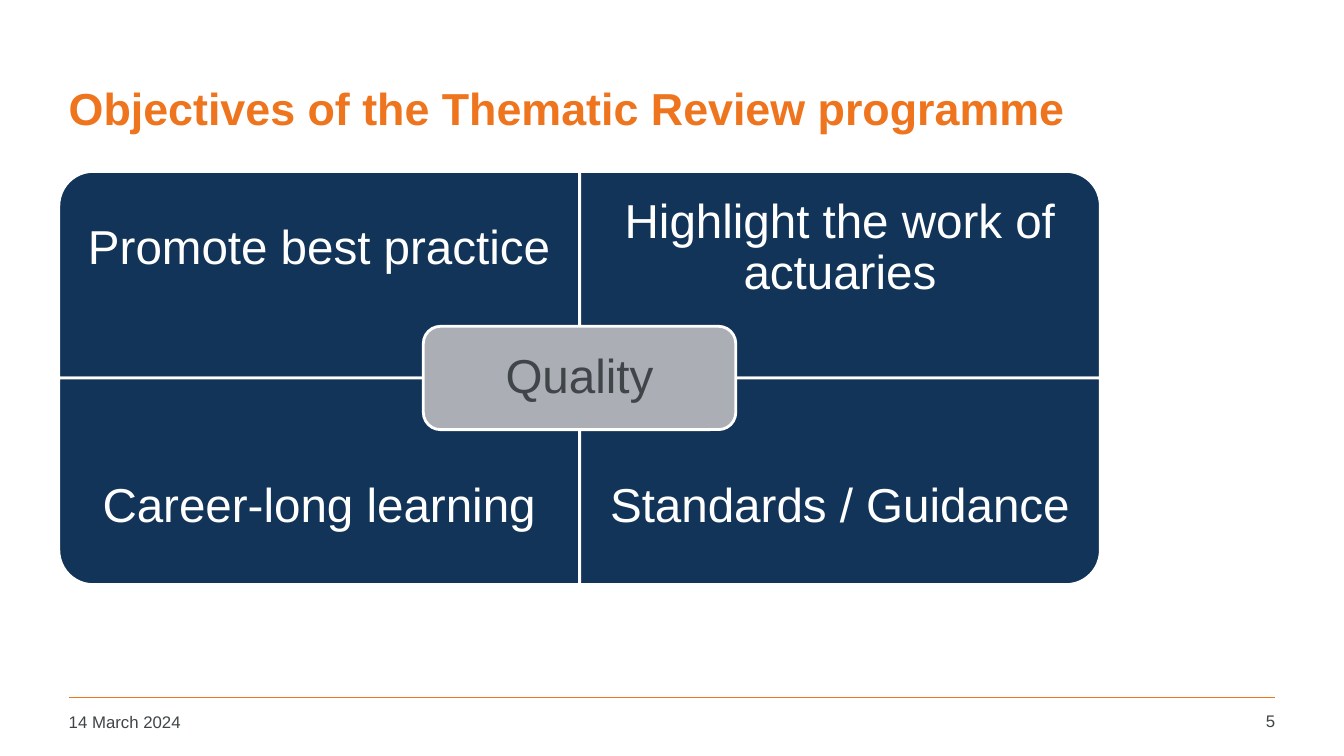
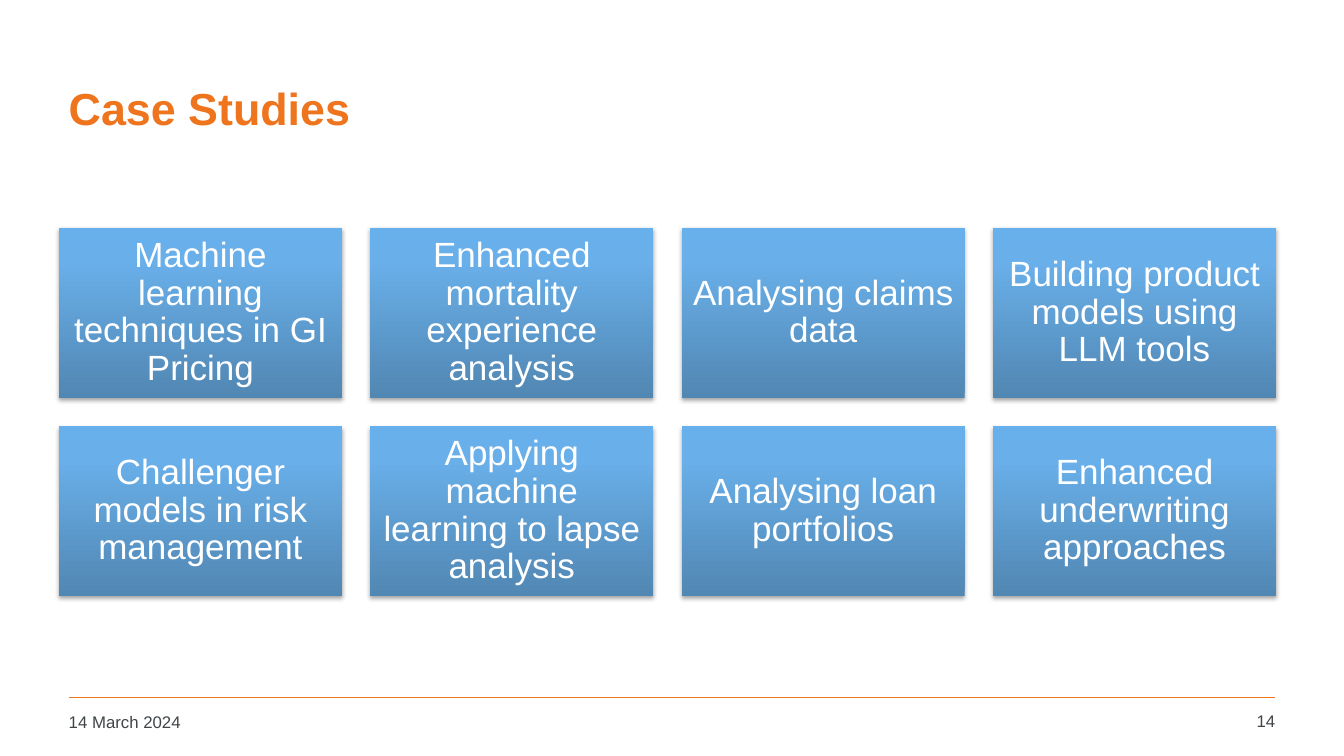
"""Build two slides on the Thematic Review programme."""
from copy import deepcopy
from dataclasses import dataclass

from pptx import Presentation as Deck
from pptx.dml.color import RGBColor as Rgb
from pptx.enum.shapes import MSO_CONNECTOR as Wire, MSO_SHAPE as Form
from pptx.enum.text import MSO_ANCHOR as Anchor, PP_ALIGN as Align
from pptx.oxml import parse_xml as to_xml
from pptx.oxml.ns import nsdecls, qn
from pptx.util import Pt


@dataclass(frozen=True)
class Theme:
    font: str = "Arial"
    orange: str = "EE741D"
    navy: str = "113458"
    grey: str = "ABAEB5"
    ink: str = "3F4548"
    white: str = "FFFFFF"
    fade: tuple = ((0, "5187B3"), (0.8, "69AFE9"), (1, "68B0EC"))
    head: int = 32
    large: int = 34
    tile: int = 25
    foot: int = 12


class Board:
    def __init__(self, deck, theme):
        self.deck, self.theme, self.slide = deck, theme, None

    def start(self, title, number):
        look = self.theme
        self.slide = self.deck.slides.add_slide(self.deck.slide_layouts[6])
        self.rule(49, 911, 498.2)
        self.text((42, 31.7, 870.5, 90), title, look.head, look.orange,
                  align=Align.LEFT, bold=True)
        for box, words, align in (((42, 504.7, 212, 26), "14 March 2024", Align.LEFT),
                                  ((850.3, 504, 67.7, 26.6), number, Align.RIGHT)):
            self.text(box, words, look.foot, look.ink, align=align, anchor=Anchor.TOP)

    def rule(self, left, right, y):
        line = self.slide.shapes.add_connector(
            Wire.STRAIGHT, Pt(left), Pt(y), Pt(right), Pt(y))
        line.line.color.rgb = Rgb.from_string(self.theme.orange)
        line.line.width = Pt(1)
        line._element.spPr.append(to_xml(f"<a:effectLst {nsdecls('a')}/>"))

    def text(self, box, words, size, color, pad=(7.2, 3.6), **style):
        shape = self.slide.shapes.add_textbox(*map(Pt, box))
        self.label(shape, words, size, color, pad, **style)

    def label(self, shape, words, size, color, pad, align=Align.CENTER,
              anchor=Anchor.MIDDLE, bold=False, space=1.0):
        frame = shape.text_frame
        frame.text = words
        frame.word_wrap = True
        frame.vertical_anchor = anchor
        frame.margin_left = frame.margin_right = Pt(pad[0])
        frame.margin_top = frame.margin_bottom = Pt(pad[1])
        para = frame.paragraphs[0]
        para.alignment, para.line_spacing = align, space
        font = para.runs[0].font
        font.name, font.size, font.bold = self.theme.font, Pt(size), bold
        font.color.rgb = Rgb.from_string(color)

    def panel(self, form, box, fill, turn=0):
        x, y, wide, high = box
        if turn % 180:
            x, y = x + (wide - high) / 2, y + (high - wide) / 2
            wide, high = high, wide
        shape = self.slide.shapes.add_shape(form, Pt(x), Pt(y), Pt(wide), Pt(high))
        shape.rotation = turn
        shape.shadow.inherit = False
        shape.fill.solid()
        shape.fill.fore_color.rgb = Rgb.from_string(fill)
        shape.line.color.rgb = Rgb.from_string(self.theme.white)
        shape.line.width = Pt(2)
        return shape

    def tile(self, box, words):
        look = self.theme
        shape = self.panel(Form.RECTANGLE, box, look.navy)
        shape.line.fill.background()
        shape.fill.gradient()
        shape.fill.gradient_angle = 90
        props = shape._element.spPr
        first = props.find(".//" + qn("a:gs"))
        first.addnext(deepcopy(first))
        for stop, (place, color) in zip(shape.fill.gradient_stops, look.fade):
            stop.position = place
            stop.color.rgb = Rgb.from_string(color)
        props.find(qn("a:effectLst")).append(to_xml(
            f'<a:outerShdw {nsdecls("a")} blurRad="{Pt(3.1)}" dist="{Pt(1.8)}" '
            'dir="5400000" rotWithShape="0"><a:srgbClr val="000000">'
            '<a:alpha val="35000"/></a:srgbClr></a:outerShdw>'))
        self.label(shape, words, look.tile, look.white, (7.2, 7.2), space=0.9)


def add_goals(board):
    look = board.theme
    board.start("Objectives of the Thematic Review programme", "5")
    mid_x, mid_y, wide, high = 414, 270, 372, 147.6
    goals = (("Promote best practice", 0, 0, 270),
             ("Highlight the work of actuaries", 1, 0, 0),
             ("Career-long learning", 0, 1, 180),
             ("Standards / Guidance", 1, 1, 90))
    for words, col, row, turn in goals:
        x, y = mid_x + (col - 1) * wide, mid_y + (row - 1) * high
        board.panel(Form.ROUND_1_RECTANGLE, (x, y, wide, high), look.navy, turn)
        board.text((x, y + row * high / 4, wide, high * 0.75), words,
                   look.large, look.white, (18.7, 18.7), space=0.9)
    hub_w, hub_h = wide * 0.6, high / 2
    hub = board.panel(Form.ROUNDED_RECTANGLE,
                      (mid_x - hub_w / 2, mid_y - hub_h / 2, hub_w, hub_h), look.grey)
    board.label(hub, "Quality", look.large, look.ink, (10, 10), space=0.9)


def add_cases(board):
    board.start("Case Studies", "14")
    cases = ("Machine learning techniques in GI Pricing",
             "Enhanced mortality experience analysis",
             "Analysing claims data",
             "Building product models using LLM tools",
             "Challenger models in risk management",
             "Applying machine learning to lapse analysis",
             "Analysing loan portfolios",
             "Enhanced underwriting approaches")
    wide = 202.2
    high, gap = wide * 0.6, wide * 0.1
    for spot, words in enumerate(cases):
        row, col = divmod(spot, 4)
        board.tile((42 + col * (wide + gap), 162.7 + row * (high + gap), wide, high), words)


def main():
    deck = Deck()
    deck.slide_width, deck.slide_height = Pt(960), Pt(540)
    board = Board(deck, Theme())
    add_goals(board)
    add_cases(board)
    deck.save("out.pptx")


if __name__ == "__main__":
    main()
